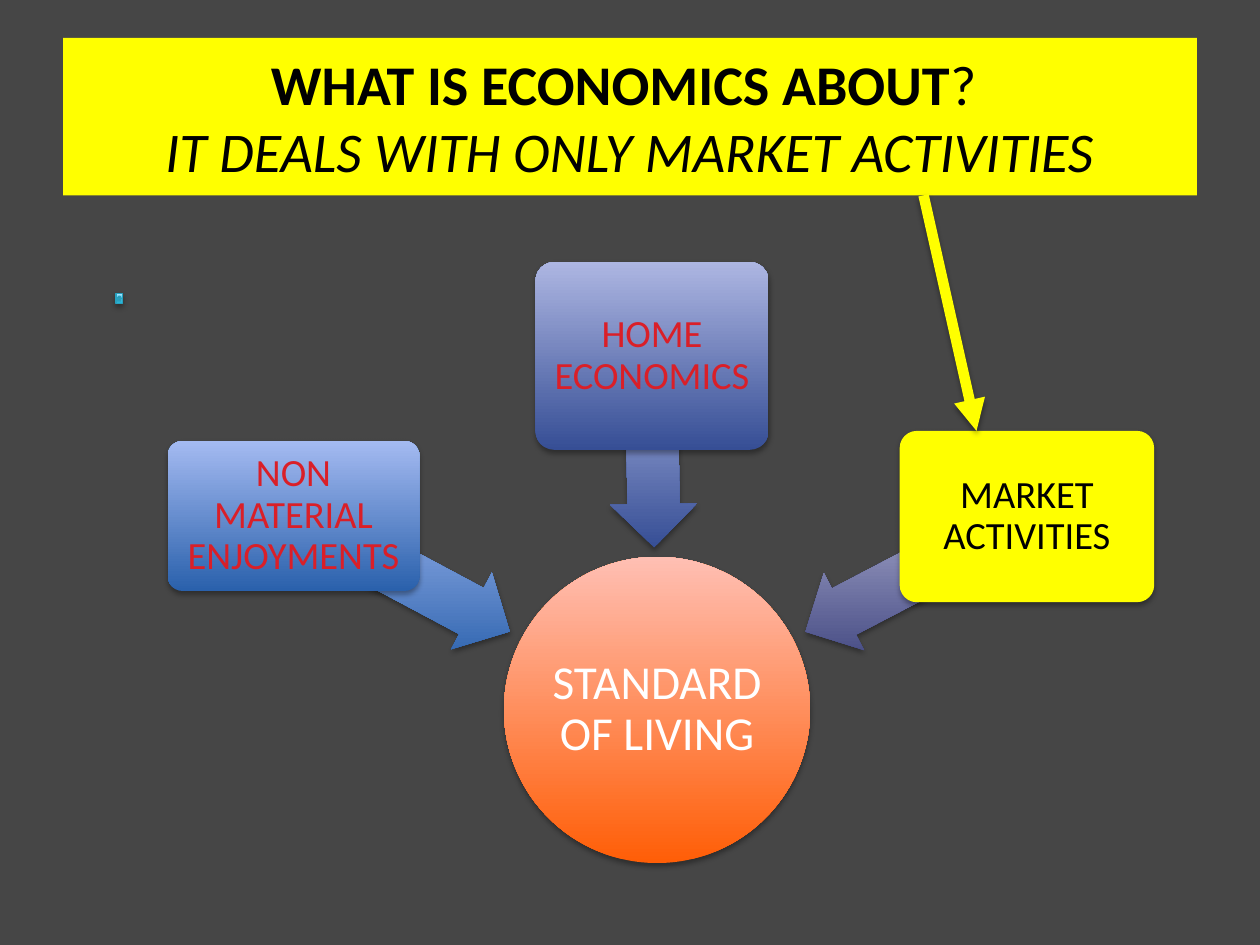
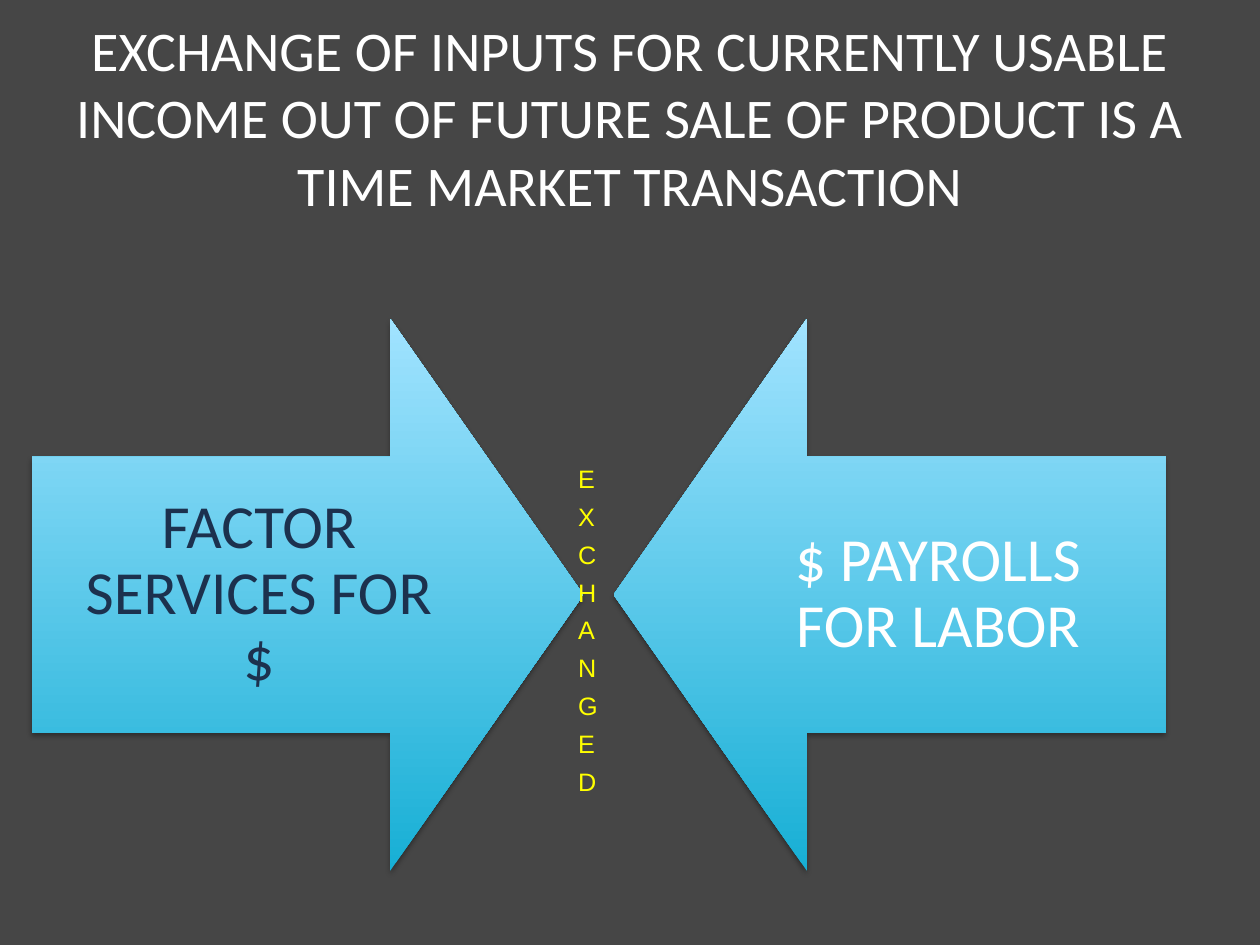
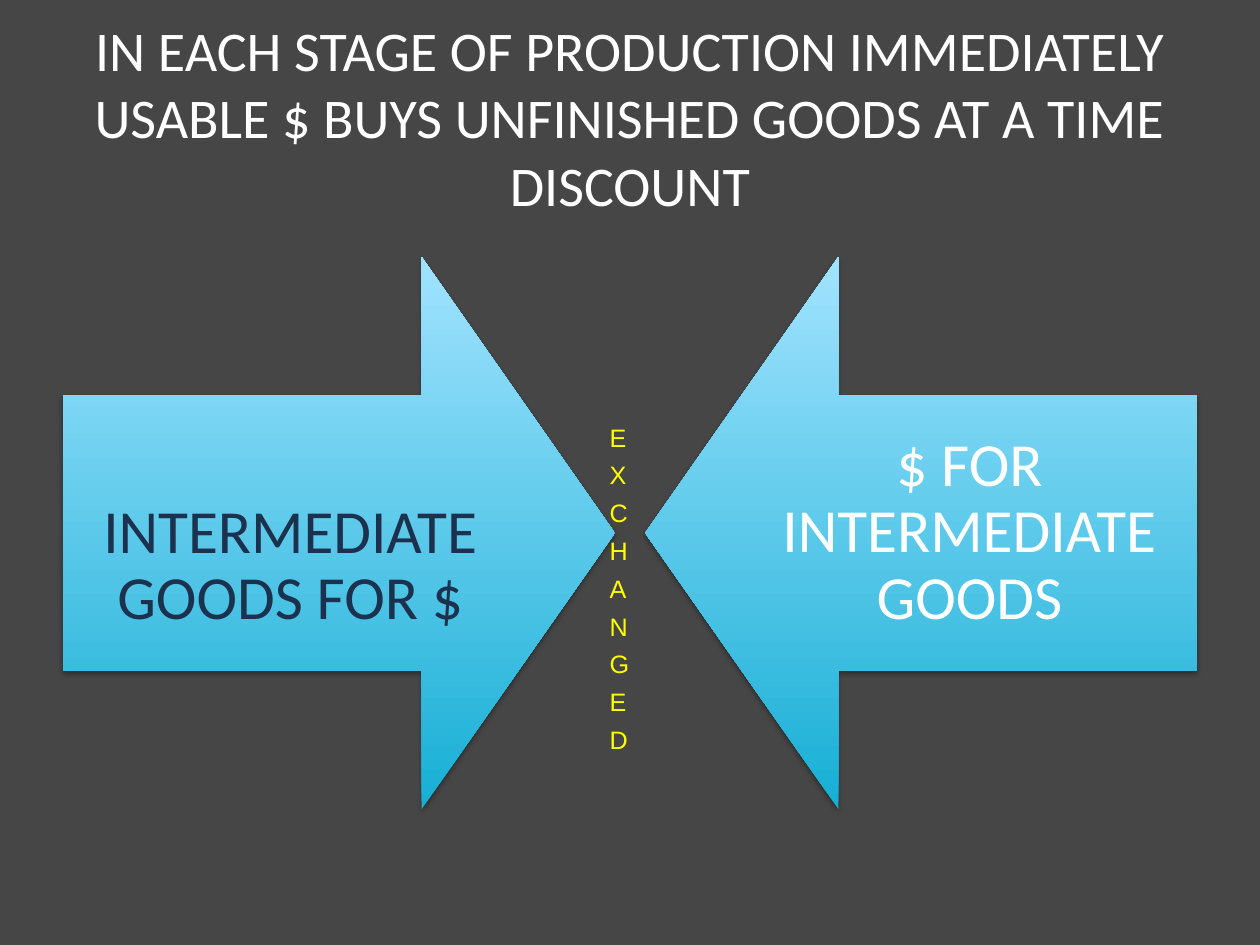
from lxml import etree
from pptx import Presentation
from pptx.dml.color import RGBColor
from pptx.enum.shapes import MSO_CONNECTOR as Link, MSO_SHAPE as Kind
from pptx.enum.text import MSO_ANCHOR as Anchor, MSO_AUTO_SIZE as Fit, PP_ALIGN as Align
from pptx.oxml.ns import qn
from pptx.util import Inches, Pt

GREY, YELLOW, WHITE, BLACK = "464646", "FFFF00", "FFFFFF", "000000"
RED, NAVY = "DA1F28", "1C314E"
FLAME = ("FF5E07", "FFBFB3")
BLUE = ("2A61AC", "A4BAF1")
INDIGO = ("364E95", "ADB6E2")
VIOLET = ("40457F", "B5B7D6")
CYAN = ("17AFD5", "A1E3FF")


def rgb(code):
    """Turn a hex string into a colour."""
    return RGBColor.from_string(code)


class Deck:
    """Holds the shared style and the current slide."""

    def __init__(self):
        """Start an empty deck with a grey master."""
        self.prs = Presentation()
        self.prs.slide_width, self.prs.slide_height = Inches(10), Inches(7.5)
        ground = self.prs.slide_master.background.fill
        ground.solid()
        ground.fore_color.rgb = rgb(GREY)

    def style(self, par, size, color, face="Calibri"):
        """Set the font of a paragraph."""
        font = par.font
        font.name, font.size = face, Pt(size)
        font.color.rgb = rgb(color)

    def shade(self, shape, alpha=35, dist=1.8):
        """Give a shape a soft shadow below it."""
        props = shape._element.spPr
        effects = etree.SubElement(props, qn("a:effectLst"))
        outer = etree.SubElement(effects, qn("a:outerShdw"), blurRad=str(Pt(3.1)),
                                 dist=str(Pt(dist)), dir="5400000", rotWithShape="0")
        tint = etree.SubElement(outer, qn("a:srgbClr"), val=BLACK)
        etree.SubElement(tint, qn("a:alpha"), val=str(alpha * 1000))

    def paint(self, shape, fill):
        """Fill a shape with one colour or an upright gradient."""
        if isinstance(fill, str):
            shape.fill.solid()
            shape.fill.fore_color.rgb = rgb(fill)
            return
        shape.fill.gradient()
        shape.fill.gradient_angle = 90
        for stop, code in zip(shape.fill.gradient_stops, fill):
            stop.color.rgb = rgb(code)
        shape._element.spPr.find(qn("a:gradFill")).set("rotWithShape", "0")

    def title(self, parts, color=WHITE, fill=None):
        """Add a slide; each part is a text with its bold and italic state."""
        self.slide = self.prs.slides.add_slide(self.prs.slide_layouts[5])
        head = self.slide.shapes.title
        head.left, head.top, head.width, head.height = map(Inches, (0.5, 0.3, 9, 1.25))
        if fill:
            self.paint(head, fill)
        frame = head.text_frame
        frame.auto_size, frame.vertical_anchor = Fit.NONE, Anchor.MIDDLE
        par = frame.paragraphs[0]
        par.alignment = Align.CENTER
        self.style(par, 32, color)
        for text, bold, slant in parts:
            if text == "\n":
                par.add_line_break()
                continue
            run = par.add_run()
            run.text = text
            run.font.bold, run.font.italic = bold, slant

    def shape(self, kind, box, fill, turn=0, adjust=(), edge=None):
        """Add a shaded preset shape."""
        shape = self.slide.shapes.add_shape(kind, *map(Inches, box))
        shape.rotation = turn
        for i, value in enumerate(adjust):
            shape.adjustments[i] = value
        self.paint(shape, fill)
        if edge:
            shape.line.color.rgb = rgb(edge)
            shape.line.width = Pt(0.75)
        else:
            shape.line.fill.background()
        self.shade(shape)
        return shape

    def letter(self, shape, text, size, color, pad, drop=0):
        """Put centred text in a shape, lowered by an extra top inset."""
        frame = shape.text_frame
        frame.word_wrap, frame.vertical_anchor = True, Anchor.MIDDLE
        frame.margin_left = frame.margin_right = frame.margin_bottom = Inches(pad)
        frame.margin_top = Inches(pad + drop)
        par = frame.paragraphs[0]
        par.text, par.alignment, par.line_spacing = text, Align.CENTER, 0.9
        self.style(par, size, color)

    def card(self, box, text, fill, color):
        """Add a rounded box with its text."""
        card = self.shape(Kind.ROUNDED_RECTANGLE, box, fill, adjust=(0.1,))
        self.letter(card, text, 22, color, 0.05)

    def label(self, box, text, color, drop=0):
        """Add a large text over an arrow."""
        area = self.slide.shapes.add_textbox(*map(Inches, box))
        self.letter(area, text, 35, color, 0.27, drop)

    def stack(self, left, top, text):
        """Add small capitals set one below another."""
        area = self.slide.shapes.add_textbox(*map(Inches, (left, top, 0.53, 2.67)))
        frame = area.text_frame
        frame.word_wrap, frame.auto_size = True, Fit.SHAPE_TO_FIT_TEXT
        frame._txBody.bodyPr.set("vert", "wordArtVert")
        par = frame.paragraphs[0]
        par.text = text
        self.style(par, 18, YELLOW, "Arial")
        par._p.pPr.find(qn("a:defRPr")).set("cap", "small")

    def arrow(self, start, end, color):
        """Add a thick straight arrow."""
        line = self.slide.shapes.add_connector(Link.STRAIGHT, *map(Inches, start + end))
        line.line.color.rgb = rgb(color)
        line.line.width = Pt(6)
        stroke = line._element.spPr.find(qn("a:ln"))
        etree.SubElement(stroke, qn("a:tailEnd"), type="triangle")
        self.shade(line, 38, 1.6)

    def trade(self, left, top, give, get, drop=0, gap=1.05):
        """Add two facing arrows with their labels and the word between."""
        size, step, wide = 4.38, 4.62, 3.61
        sides = ((left, left, 270, give, NAVY, drop),
                 (left + step, left + step + size - wide, 90, get, WHITE, 0))
        for x, edge, turn, text, color, low in sides:
            self.shape(Kind.DOWN_ARROW, (x, top, size, size), CYAN, turn, (0.5, 0.35))
            self.label((edge, top + size / 4, wide, size / 2), text, color, low)
        self.stack(left + 4.24, top + gap, "exchanged")


def main():
    """Build the three slides."""
    deck = Deck()

    deck.title([("WHAT IS ECONOMICS ABOUT", True, None), ("? ", False, None),
                ("\n", None, None),
                ("IT DEALS WITH ONLY MARKET ACTIVITIES", False, True)], BLACK, YELLOW)
    goal = deck.shape(Kind.OVAL, (4, 4.42, 2.43, 2.43), FLAME)
    deck.letter(goal, "STANDARD OF LIVING", 27, WHITE, 0.02)
    sources = (
        ((2.22, 4.21, 1.94, 0.69), 208.1, BLUE,
         (1.33, 3.5, 2, 1.19), "NON MATERIAL ENJOYMENTS", BLUE, RED),
        ((4.41, 3.23, 1.54, 0.69), 269.1, INDIGO,
         (4.25, 2.08, 1.85, 1.49), "HOME ECONOMICS", INDIGO, RED),
        ((6.28, 4.21, 1.98, 0.69), 332.4, VIOLET,
         (7.14, 3.42, 2.02, 1.36), "MARKET ACTIVITIES", YELLOW, BLACK),
    )
    for flow, turn, tone, box, text, fill, color in sources:
        deck.shape(Kind.LEFT_ARROW, flow, tone, turn, (0.6, 0.5))
        deck.card(box, text, fill, color)
    deck.shape(Kind.ACTION_BUTTON_HOME, (0.92, 2.33, 0.05, 0.08), CYAN, edge="28A1BE")
    deck.arrow((7.33, 1.55), (7.75, 3.42), YELLOW)

    deck.title([("EXCHANGE OF INPUTS FOR CURRENTLY USABLE INCOME OUT OF FUTURE "
                 "SALE OF PRODUCT IS A TIME MARKET TRANSACTION", None, None)])
    deck.trade(0.25, 2.53, "FACTOR SERVICES FOR $", "$ PAYROLLS FOR LABOR")

    deck.title([("IN EACH STAGE OF PRODUCTION IMMEDIATELY USABLE $ BUYS "
                 "UNFINISHED GOODS AT A TIME DISCOUNT", None, None)])
    deck.trade(0.5, 2.04, "INTERMEDIATE GOODS FOR $", "$ FOR INTERMEDIATE GOODS",
               drop=0.53, gap=1.21)

    deck.prs.save("out.pptx")


if __name__ == "__main__":
    main()
